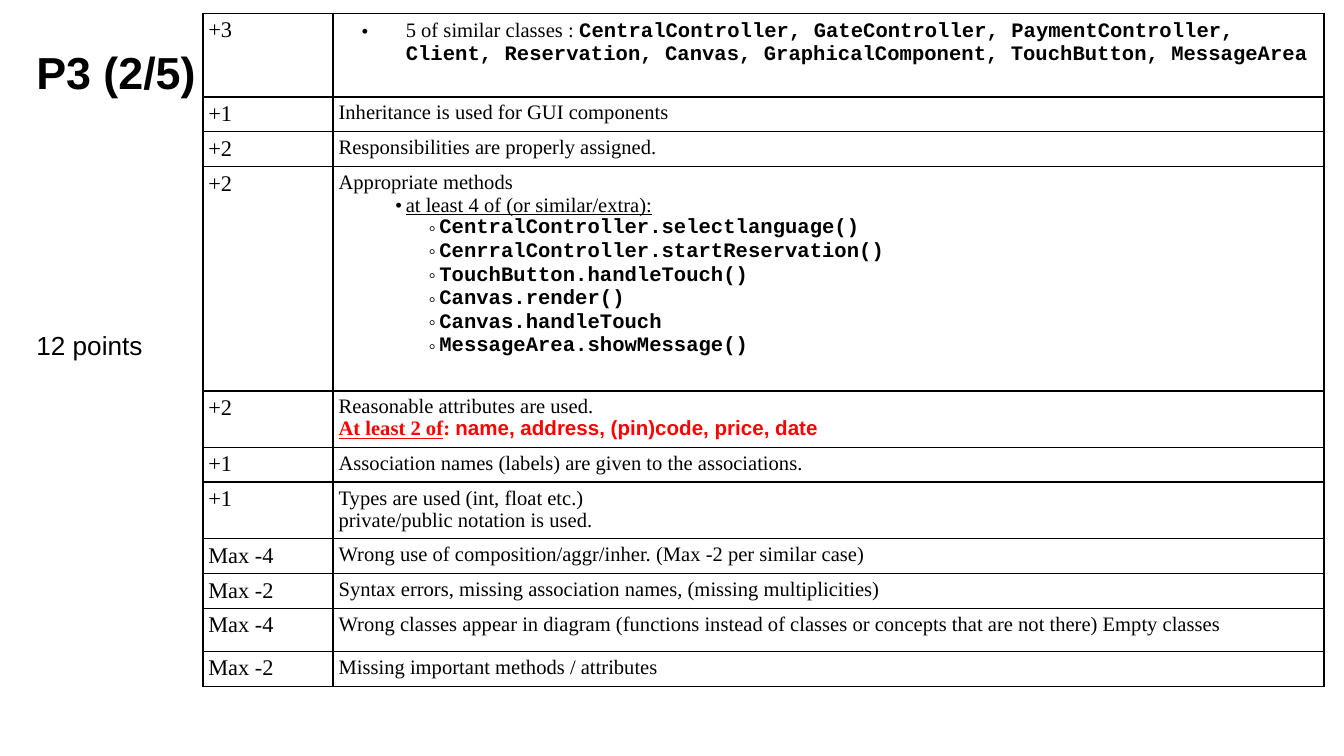
"""Build the P3 grading slide with its table of points."""
import pptx
import pptx.dml.color
import pptx.enum.text
import pptx.util
from lxml import etree

Inches = pptx.util.Inches
Pt = pptx.util.Pt

BLACK, RED = "000000", "FF0000"
SERIF, MONO, SANS = "Times New Roman", "Courier New", "Arial"
STYLES = {
    "mark": dict(size=12),
    "plain": dict(),
    "under": dict(line=True),
    "code": dict(name=MONO, bold=True),
    "alert": dict(color=RED, bold=True),
    "alert under": dict(color=RED, bold=True, line=True),
    "alert sans": dict(name=SANS, color=RED, bold=True),
}
BULLETS = {
    "class": ("•", 0, 0.5, 0.33),
    "head": ("•", 0, 0.5, 0.08),
    "method": ("◦", 1, 0.75, 0.08),
}
METHODS = [
    "CentralController.selectlanguage()",
    "CenrralController.startReservation()",
    "TouchButton.handleTouch()",
    "Canvas.render()",
    "Canvas.handleTouch",
    "MessageArea.showMessage()",
]
CLASSES = ("CentralController, GateController, PaymentController, Client, Reservation, "
           "Canvas, GraphicalComponent, TouchButton, MessageArea")


def line(text, style="plain", bullet=None):
    return [(text, style)], bullet


ROWS = [
    ("+3", 0.62, [([("5 of similar classes : ", "plain"), (CLASSES, "code")], "class")]),
    ("+1", 0.26, [line("Inheritance is used for GUI components")]),
    ("+2", 0.26, [line("Responsibilities are properly assigned.")]),
    ("+2", 1.67, [line("Appropriate methods"),
                  line("at least 4 of (or similar/extra):", "under", "head")]
     + [line(name, "code", "method") for name in METHODS]),
    ("+2", 0.42, [line("Reasonable attributes are used."),
                  ([("At least 2 of", "alert under"), (": ", "alert"),
                    ("name, address, (pin)code, price, date", "alert sans")], None)]),
    ("+1", 0.26, [line("Association names (labels) are given to the associations.")]),
    ("+1", 0.42, [line("Types are used (int, float etc.)"),
                  line("private/public notation is used.")]),
    ("Max -4", 0.26, [line("Wrong use of composition/aggr/inher. (Max -2 per similar case)")]),
    ("Max -2", 0.26, [line("Syntax errors, missing association names, (missing multiplicities)")]),
    ("Max -4", 0.32, [line("Wrong classes appear in diagram (functions instead of classes "
                           "or concepts that are not there) Empty classes")]),
    ("Max -2", 0.26, [line("Missing important methods / attributes")]),
]
WIDTHS = [0.97, 7.37]


def add_xml(parent, tag, **attrs):
    return etree.SubElement(parent, pptx.oxml.ns.qn(tag), attrs)


def set_font(font, size=11, name=SERIF, color=BLACK, bold=False, line=False):
    font.size, font.name, font.bold, font.underline = Pt(size), name, bold, line
    font.color.rgb = pptx.dml.color.RGBColor.from_string(color)


def set_bullet(para, char, level, left, hang):
    para.level = level
    props = para._p.get_or_add_pPr()
    props.set("marL", str(Inches(left)))
    props.set("indent", str(-Inches(hang)))
    for tag, attrs in (("a:buFont", {"typeface": SERIF}), ("a:buChar", {"char": char})):
        item = etree.Element(pptx.oxml.ns.qn(tag), attrs)
        props.insert_element_before(item, "a:tabLst", "a:defRPr", "a:extLst")


def fill_cell(cell, paras):
    cell.margin_left = cell.margin_right = Inches(0.04)
    cell.margin_top = cell.margin_bottom = Inches(0.04)
    frame = cell.text_frame
    for i, (runs, bullet) in enumerate(paras):
        para = frame.add_paragraph() if i else frame.paragraphs[0]
        para.line_spacing = 1.0 if bullet else 0.96
        for text, style in runs:
            run = para.add_run()
            run.text = text
            set_font((run if len(runs) > 1 else para).font, **STYLES[style])
        if bullet:
            set_bullet(para, *BULLETS[bullet])
    props = cell._tc.get_or_add_tcPr()
    for side in ("a:lnL", "a:lnR", "a:lnT", "a:lnB"):
        edge = add_xml(props, side, w=str(Pt(1)))
        add_xml(add_xml(edge, "a:solidFill"), "a:srgbClr", val=BLACK)
    add_xml(props, "a:noFill")


def fill_holder(shape, text, box, size, bold):
    shape.left, shape.top, shape.width, shape.height = map(Inches, box)
    frame = shape.text_frame
    frame.text = text
    frame.word_wrap = True
    frame.auto_size = pptx.enum.text.MSO_AUTO_SIZE.NONE
    frame.vertical_anchor = pptx.enum.text.MSO_ANCHOR.TOP
    frame.margin_left = frame.margin_right = Inches(0.1)
    frame.margin_top = frame.margin_bottom = Inches(0.1)
    para = frame.paragraphs[0]
    para.alignment = pptx.enum.text.PP_ALIGN.LEFT
    para.line_spacing, para.space_before = 1.0, Pt(0)
    props = para._p.get_or_add_pPr()
    props.set("marL", "0")
    props.set("indent", "0")
    add_xml(props, "a:buNone")
    set_font(para.font, size, SANS, BLACK, bold)


def main():
    deck = pptx.Presentation()
    deck.slide_width, deck.slide_height = Inches(10), Inches(10 * 9 / 16)
    slide = deck.slides.add_slide(deck.slide_layouts[1])
    title, body = slide.placeholders
    fill_holder(title, "P3 (2/5)", (0.17, 0.23, 1.76, 0.76), 24, True)
    fill_holder(body, "12 points", (0.17, 2.35, 1.24, 0.66), 14, False)

    high = sum(row[1] for row in ROWS)
    table = slide.shapes.add_table(len(ROWS), len(WIDTHS), Inches(1.51), Inches(0.1),
                                   Inches(sum(WIDTHS)), Inches(high)).table
    table.first_row = table.horz_banding = False
    for col, width in zip(table.columns, WIDTHS):
        col.width = Inches(width)
    for row, (mark, height, paras) in zip(table.rows, ROWS):
        row.height = Inches(height)
        fill_cell(row.cells[0], [line(mark, "mark")])
        fill_cell(row.cells[1], paras)
    deck.save("out.pptx")


if __name__ == "__main__":
    main()
